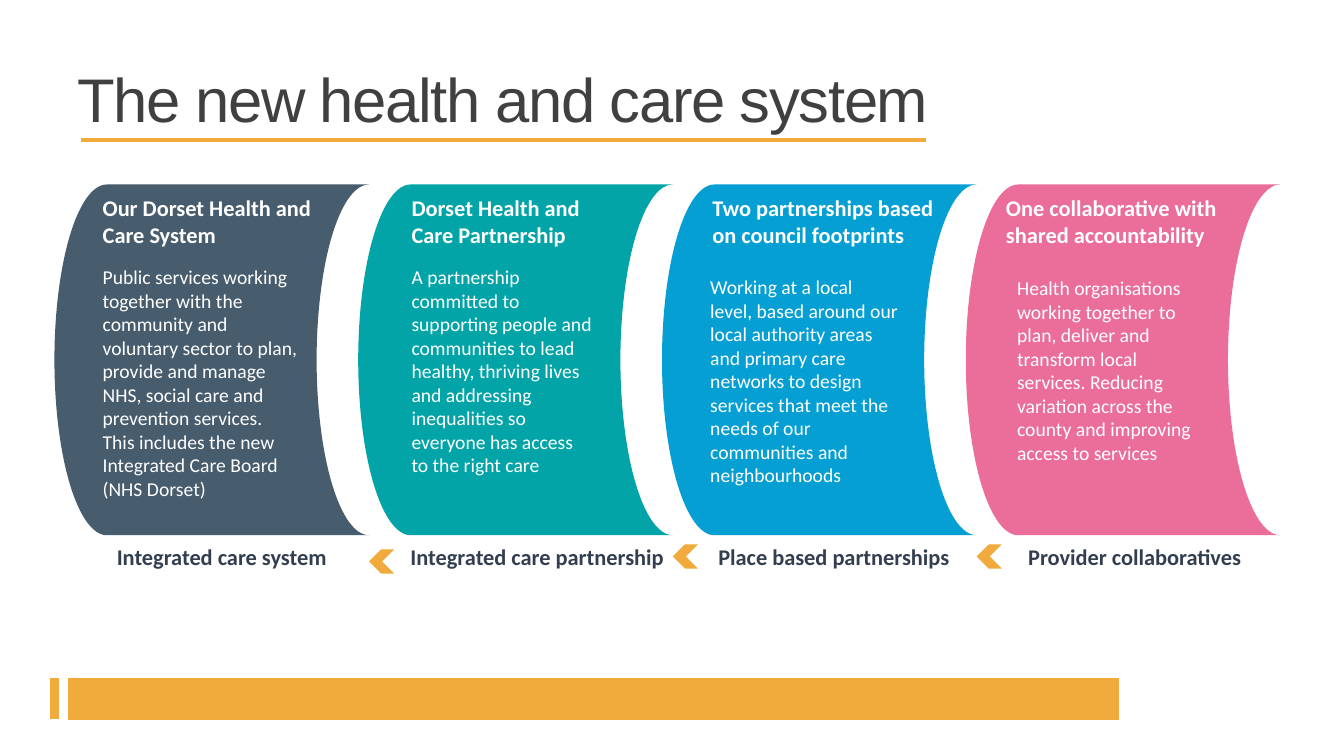
from lxml.etree import SubElement
from pptx import Presentation
from pptx.dml.color import RGBColor
from pptx.enum.shapes import MSO_CONNECTOR, MSO_SHAPE
from pptx.enum.text import MSO_ANCHOR
from pptx.oxml.ns import qn
from pptx.util import Inches, Pt

GOLD, WHITE, NAVY, GREY = "F1AB3D", "FFFFFF", "333F50", "404040"
LEFT, TOP, PITCH = 0.54, 1.83, 3.013
WIDE, HIGH = 3.12, 3.48

# fill, heading, body, label; each text is (wording, shift right, width),
# and the body also has its shift down
STAGES = [
    ("475C6D",
     ("Our Dorset Health and Care System", 0.38, 2.32),
     ("Public services working together with the community and voluntary "
      "sector to plan, provide and manage NHS, social care and prevention "
      "services. This includes the new Integrated Care Board (NHS Dorset)",
      0.38, 2.13, 0.75),
     ("Integrated care system", 0.52, 2.32)),
    ("02A4A7",
     ("Dorset Health and Care Partnership", 0.43, 2.32),
     ("A partnership committed to supporting people and communities to lead "
      "healthy, thriving lives and addressing inequalities so everyone has "
      "access to the right care", 0.43, 1.99, 0.75),
     ("Integrated care partnership", 0.42, 3.12)),
    ("059FD4",
     ("Two partnerships based on council footprints", 0.4, 2.42),
     ("Working at a local level, based around our local authority areas and "
      "primary care networks to design services that meet the needs of our "
      "communities and neighbourhoods", 0.38, 2.07, 0.85),
     ("Place based partnerships", 0.46, 3.12)),
    ("EA6D9A",
     ("One collaborative with shared accountability", 0.3, 2.42),
     ("Health organisations working together to plan, deliver and transform "
      "local services. Reducing variation across the county and improving "
      "access to services", 0.41, 1.99, 0.86),
     ("Provider collaboratives", 0.52, 3.12)),
]
ARROWS = [5.45, 5.4, 5.4]


def paint(color, tone):
    color.rgb = RGBColor.from_string(tone)


def write(slide, words, x, y, w, h, size=16, tone=WHITE, bold=False,
          face="Calibri", anchor=MSO_ANCHOR.TOP, lead=None, track=None):
    box = slide.shapes.add_textbox(Inches(x), Inches(y), Inches(w), Inches(h))
    frame = box.text_frame
    frame.word_wrap = True
    frame.vertical_anchor = anchor
    para = frame.paragraphs[0]
    para.line_spacing = lead
    run = para.add_run()
    run.text = words
    run.font.name, run.font.size, run.font.bold = face, Pt(size), bold
    paint(run.font.color, tone)
    if track:
        run.font._element.set("spc", str(track * 100))


def draw(slide, kind, x, y, w, h, tone, turn=0):
    shape = slide.shapes.add_shape(
        kind, Inches(x), Inches(y), Inches(w), Inches(h))
    shape.shadow.inherit = False
    shape.fill.solid()
    paint(shape.fill.fore_color, tone)
    shape.line.fill.background()
    shape.rotation = turn


def rule(slide, x1, y1, x2, y2, width):
    line = slide.shapes.add_connector(
        MSO_CONNECTOR.STRAIGHT, Inches(x1), Inches(y1), Inches(x2), Inches(y2))
    paint(line.line.color, GOLD)
    line.line.width = Pt(width)
    SubElement(line._element.spPr, qn("a:effectLst"))


def header(slide, x, y):
    write(slide, "The new health and care system", x, y, 10.65, 0.9, size=44,
          tone=GREY, face="Arial", anchor=MSO_ANCHOR.MIDDLE, lead=0.9, track=-1)
    rule(slide, x + 0.13, y + 0.82, x + 8.51, y + 0.82, 3)


def footer(slide, x, y):
    rule(slide, x + 0.13, y, x + 10.56, y, 30)
    rule(slide, x, y - 0.2, x, y + 0.2, 6)


def stage(slide, x, y, tone, head, body, label):
    draw(slide, MSO_SHAPE.FLOWCHART_STORED_DATA, x, y, WIDE, HIGH, tone)
    words, dx, w = head
    write(slide, words, x + dx, y + 0.05, w, 0.64, bold=True)
    words, dx, w, dy = body
    write(slide, words, x + dx, y + dy, w, 2.46, size=14)
    words, dx, w = label
    write(slide, words, x + dx, y + HIGH + 0.03, w, 0.37, tone=NAVY, bold=True)


def main():
    deck = Presentation()
    deck.slide_width, deck.slide_height = Inches(13.33), Inches(7.5)
    slide = deck.slides.add_slide(deck.slide_layouts[6])
    header(slide, 0.67, 0.57)
    footer(slide, LEFT, 6.93)
    for col, parts in enumerate(STAGES):
        stage(slide, LEFT + col * PITCH, TOP, *parts)
    for col, y in enumerate(ARROWS):
        draw(slide, MSO_SHAPE.CHEVRON, LEFT + WIDE + col * PITCH, y,
             0.25, 0.24, GOLD, turn=180)
    deck.save("out.pptx")


if __name__ == "__main__":
    main()
